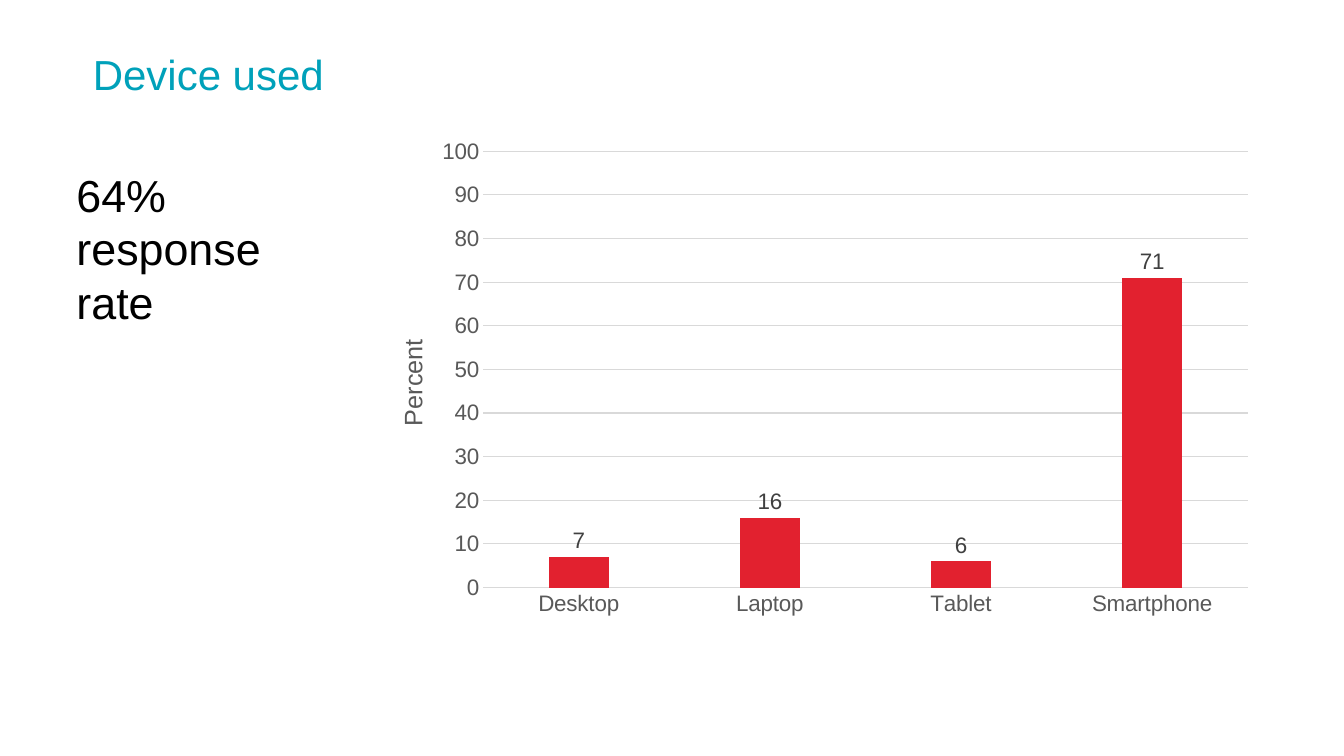
from dataclasses import dataclass

from lxml import etree
from pptx import Presentation
from pptx.chart.data import CategoryChartData
from pptx.dml.color import RGBColor
from pptx.enum.chart import XL_CHART_TYPE, XL_LABEL_POSITION, XL_TICK_MARK
from pptx.enum.text import MSO_ANCHOR, PP_ALIGN
from pptx.oxml.ns import qn
from pptx.util import Inches, Pt

COLUMNS = XL_CHART_TYPE.COLUMN_CLUSTERED
LABELS_OUTSIDE = XL_LABEL_POSITION.OUTSIDE_END
NO_TICKS = XL_TICK_MARK.NONE
TOP = MSO_ANCHOR.TOP
LEFT = PP_ALIGN.LEFT
TITLE_ONLY = 5


@dataclass(frozen=True)
class Theme:
    font: str = "Arial"
    title: str = "00A1BA"
    text: str = "000000"
    axis: str = "595959"
    label: str = "404040"
    grid: str = "D9D9D9"
    bar: str = "E2212F"
    title_size: int = 30
    body_size: int = 32
    axis_title_size: int = 18
    axis_size: int = 16
    grid_width: float = 0.75


def set_layout(parent, index, **values):
    for existing in parent.findall(qn("c:layout")):
        parent.remove(existing)
    layout = etree.Element(qn("c:layout"))
    manual = etree.SubElement(layout, qn("c:manualLayout"))
    for name, value in values.items():
        etree.SubElement(manual, qn(f"c:{name}")).set("val", str(value))
    parent.insert(index, layout)


class SlideBuilder:
    """Adds themed elements to the current slide."""

    def __init__(self, presentation, theme):
        self.theme = theme
        self.slide = presentation.slides.add_slide(presentation.slide_layouts[TITLE_ONLY])

    def style(self, font, size, color):
        font.name = self.theme.font
        font.size = Pt(size)
        font.bold = False
        font.color.rgb = RGBColor.from_string(color)

    def line(self, line_format):
        line_format.color.rgb = RGBColor.from_string(self.theme.grid)
        line_format.width = Pt(self.theme.grid_width)

    def title(self, text, left, top, width, height):
        shape = self.slide.shapes.title
        shape.left, shape.top = Inches(left), Inches(top)
        shape.width, shape.height = Inches(width), Inches(height)
        frame = shape.text_frame
        frame.margin_left = frame.margin_top = frame.margin_right = frame.margin_bottom = 0
        frame.vertical_anchor = TOP
        frame.text = text
        paragraph = frame.paragraphs[0]
        paragraph.alignment = LEFT
        paragraph.line_spacing = 0.9
        self.style(paragraph.font, self.theme.title_size, self.theme.title)

    def text(self, text, left, top, width, height):
        shape = self.slide.shapes.add_textbox(
            Inches(left), Inches(top), Inches(width), Inches(height))
        frame = shape.text_frame
        frame.word_wrap = True
        frame.text = text
        self.style(frame.paragraphs[0].font, self.theme.body_size, self.theme.text)

    def column_chart(self, values, axis_title, left, top, width, height):
        data = CategoryChartData()
        data.categories = list(values)
        data.add_series("Series 1", list(values.values()))
        chart = self.slide.shapes.add_chart(
            COLUMNS, Inches(left), Inches(top), Inches(width), Inches(height), data).chart
        chart.has_legend = False
        chart.has_title = False
        self.style(chart.font, self.theme.axis_size, self.theme.axis)
        self.columns(chart.plots[0])
        self.axes(chart, axis_title)
        plot_area = chart.plots[0]._element.getparent()
        set_layout(plot_area, 0, layoutTarget="inner", xMode="edge", yMode="edge",
                   x=0.142, y=0.103, w=0.853, h=0.73)

    def columns(self, plot):
        plot.vary_by_categories = False
        plot.gap_width = 219
        plot.overlap = -27
        fill = plot.series[0].format.fill
        fill.solid()
        fill.fore_color.rgb = RGBColor.from_string(self.theme.bar)
        plot.has_data_labels = True
        labels = plot.data_labels
        labels.show_value = True
        labels.position = LABELS_OUTSIDE
        self.style(labels.font, self.theme.axis_size, self.theme.label)

    def axes(self, chart, axis_title):
        for axis in (chart.category_axis, chart.value_axis):
            axis.major_tick_mark = axis.minor_tick_mark = NO_TICKS
            self.style(axis.tick_labels.font, self.theme.axis_size, self.theme.axis)
        self.line(chart.category_axis.format.line)
        value_axis = chart.value_axis
        value_axis.minimum_scale, value_axis.maximum_scale = 0, 100
        value_axis.major_unit = 10
        value_axis.format.line.fill.background()
        value_axis.has_major_gridlines = True
        self.line(value_axis.major_gridlines.format.line)
        title = value_axis.axis_title
        title.text_frame.text = axis_title
        self.style(title.text_frame.paragraphs[0].font,
                   self.theme.axis_title_size, self.theme.axis)
        element = title._element
        body = element.find(".//" + qn("a:bodyPr"))
        body.set("rot", "-5400000")
        body.set("vert", "horz")
        set_layout(element, 1, xMode="edge", yMode="edge", x=0.04, y=0.41)


def main():
    presentation = Presentation()
    presentation.slide_width = Inches(13.33)
    presentation.slide_height = Inches(7.5)
    builder = SlideBuilder(presentation, Theme())
    builder.title("Device used", 0.92, 0.54, 11.5, 0.87)
    devices = {"Desktop": 7, "Laptop": 16, "Tablet": 6, "Smartphone": 71}
    builder.column_chart(devices, "Percent", 3.53, 0.89, 8.89, 5.93)
    builder.text("64% response rate", 0.66, 1.61, 2.66, 1.72)
    presentation.save("out.pptx")


if __name__ == "__main__":
    main()
